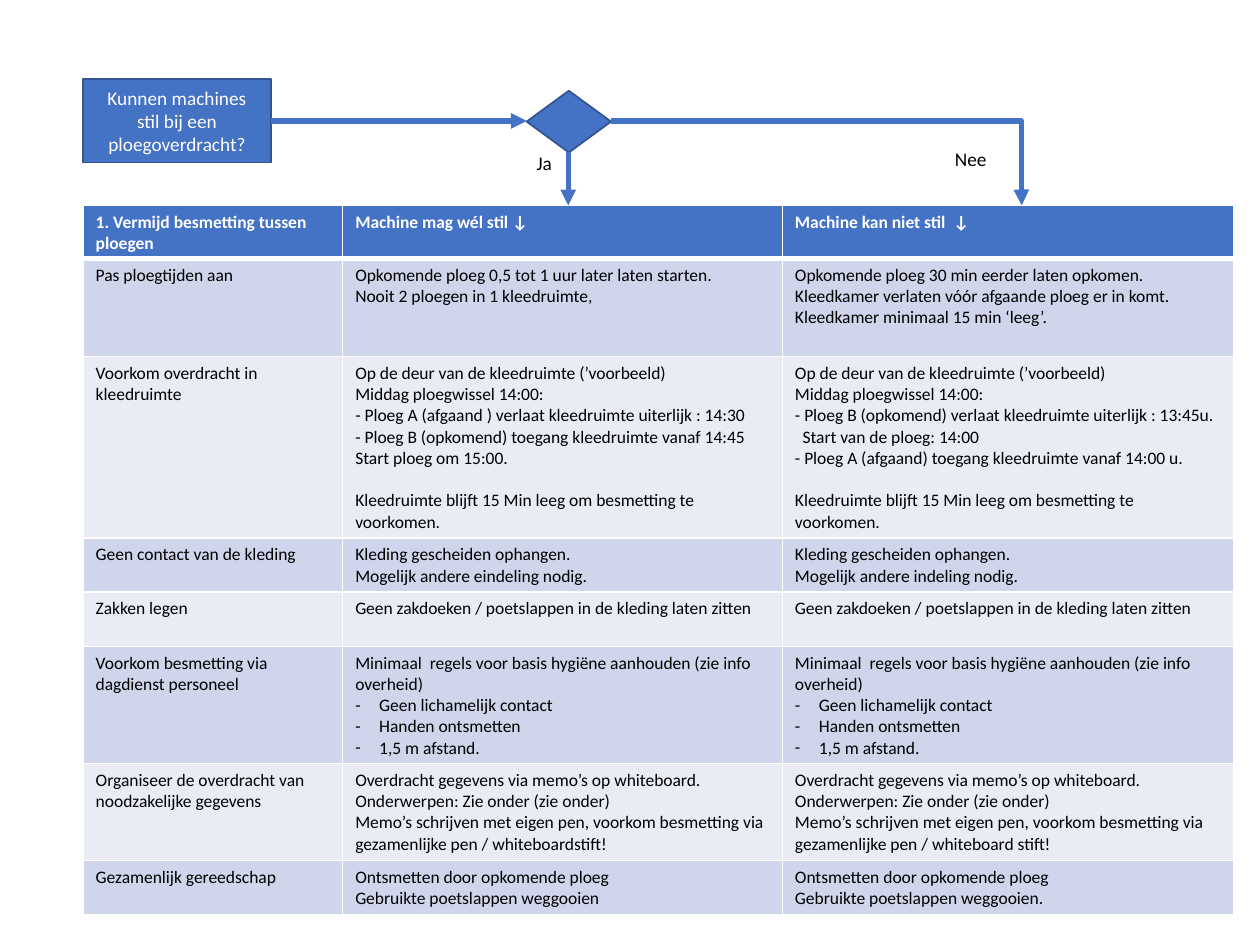
from lxml.etree import SubElement
from pptx import Presentation
from pptx.dml.color import RGBColor
from pptx.enum.shapes import MSO_CONNECTOR, MSO_SHAPE
from pptx.enum.text import MSO_ANCHOR, MSO_AUTO_SIZE, PP_ALIGN
from pptx.oxml import parse_xml
from pptx.oxml.ns import nsdecls, qn
from pptx.util import Inches, Pt

BLUE, EDGE, WHITE, BLACK = "4472C4", "325491", "FFFFFF", "000000"
BANDS = ["E9EBF5", "CFD5EA"]


def rgb(value):
    return RGBColor.from_string(value)


def write(tf, text, size=10, color=BLACK, bold=False, align=PP_ALIGN.LEFT):
    for i, line in enumerate(text.split("\n")):
        p = tf.paragraphs[0] if i == 0 else tf.add_paragraph()
        mark = line[:2]
        p.text = line[2:] if mark in ("* ", "+ ", "> ") else line
        p.alignment = align
        pPr = p._p.get_or_add_pPr()
        if mark == "* ":
            pPr.set("marL", str(Inches(0.19)))
            pPr.set("indent", str(-Inches(0.19)))
            SubElement(pPr, qn("a:buFont")).set("typeface", "Calibri")
            SubElement(pPr, qn("a:buChar")).set("char", "-")
        elif mark == "> ":
            pPr.set("marL", str(Inches(0.06)))
        elif mark == "+ ":
            p.space_before = Pt(12.2)
        for br in p._p.findall(qn("a:br")):
            SubElement(br, qn("a:rPr")).set("sz", str(size * 100))
        for r in p.runs:
            r.font.name = "Calibri"
            r.font.size = Pt(size)
            r.font.bold = bold
            r.font.color.rgb = rgb(color)


prs = Presentation()
prs.slide_width, prs.slide_height = Inches(10), Inches(7.5)
U = prs.slide_width // 1000
s = prs.slides.add_slide(prs.slide_layouts[6])

for kind, x, y, w, h, text in [
    (MSO_SHAPE.RECTANGLE, 66, 63, 149, 66, "Kunnen machines stil bij een ploegoverdracht?"),
    (MSO_SHAPE.FLOWCHART_DECISION, 418, 72, 67, 49, ""),
]:
    sp = s.shapes.add_shape(kind, x * U, y * U, w * U, h * U)
    sp.shadow.inherit = False
    sp.fill.solid()
    sp.fill.fore_color.rgb = rgb(BLUE)
    sp.line.color.rgb = rgb(EDGE)
    sp.line.width = Pt(1)
    sp.text_frame.word_wrap = True
    sp.text_frame.vertical_anchor = MSO_ANCHOR.MIDDLE
    write(sp.text_frame, text, size=11, color=WHITE, align=PP_ALIGN.CENTER)

for text, x, y, w in [("Ja", 416, 115, 32), ("Nee", 748, 112, 46)]:
    tf = s.shapes.add_textbox(x * U, y * U, w * U, 29 * U).text_frame
    tf.word_wrap = False
    tf.auto_size = MSO_AUTO_SIZE.SHAPE_TO_FIT_TEXT
    write(tf, text, size=11)

door = "Op de deur van de kleedruimte (’voorbeeld)\vMiddag ploegwissel 14:00:\v"
empty = "\n+ Kleedruimte blijft 15 Min leeg om besmetting te voorkomen."
clothes = "Kleding gescheiden ophangen.\vMogelijk andere "
pockets = "Geen zakdoeken / poetslappen in de kleding laten zitten"
hygiene = ("Minimaal  regels voor basis hygiëne aanhouden (zie info overheid)\n"
           "* Geen lichamelijk contact\n* Handen ontsmetten\n* 1,5 m afstand.")
notes = ("Overdracht gegevens via memo’s op whiteboard.\vOnderwerpen: Zie onder (zie onder)\n"
         "Memo’s schrijven met eigen pen, voorkom besmetting via gezamenlijke pen / ")
tools = "Ontsmetten door opkomende ploeg\nGebruikte poetslappen weggooien"
rows = [
    (42, "1. Vermijd besmetting tussen ploegen", "Machine mag wél stil ↓", "Machine kan niet stil  ↓"),
    (78, "Pas ploegtijden aan",
     "Opkomende ploeg 0,5 tot 1 uur later laten starten.\vNooit 2 ploegen in 1 kleedruimte,",
     "Opkomende ploeg 30 min eerder laten opkomen. Kleedkamer verlaten vóór afgaande ploeg er in komt.\n"
     "Kleedkamer minimaal 15 min ‘leeg’."),
    (144, "Voorkom overdracht in kleedruimte",
     door + "- Ploeg A (afgaand ) verlaat kleedruimte uiterlijk : 14:30\n"
     "- Ploeg B (opkomend) toegang kleedruimte vanaf 14:45 Start ploeg om 15:00." + empty,
     door + "- Ploeg B (opkomend) verlaat kleedruimte uiterlijk : 13:45u.\n"
     "> Start van de ploeg: 14:00\n"
     "- Ploeg A (afgaand) toegang kleedruimte vanaf 14:00 u." + empty),
    (43, "Geen contact van de kleding", clothes + "eindeling nodig.", clothes + "indeling nodig."),
    (43, "Zakken legen", pockets, pockets),
    (93, "Voorkom besmetting via dagdienst personeel", hygiene, hygiene),
    (77, "Organiseer de overdracht van noodzakelijke gegevens",
     notes + "whiteboardstift!", notes + "whiteboard stift!"),
    (43, "Gezamenlijk gereedschap", tools, tools + "."),
]
cols = [206, 349, 358]
total = sum(row[0] for row in rows)
table = s.shapes.add_table(len(rows), 3, 66 * U, 163 * U, sum(cols) * U, total * U).table
for c, w in enumerate(cols):
    table.columns[c].width = w * U
for i, (h, *texts) in enumerate(rows):
    table.rows[i].height = h * U
    for c, text in enumerate(texts):
        cell = table.cell(i, c)
        cell.margin_left = cell.margin_right = Inches(0.1)
        cell.margin_top, cell.margin_bottom = Inches(0.05), Inches(0.03)
        for side in "LRTB":
            thick = (i, side) in [(0, "B"), (1, "T")]
            cell._tc.get_or_add_tcPr().append(parse_xml(
                f'<a:ln{side} {nsdecls("a")} w="{Pt(3 if thick else 1)}"><a:solidFill>'
                f'<a:srgbClr val="{WHITE}"/></a:solidFill></a:ln{side}>'))
        cell.fill.solid()
        cell.fill.fore_color.rgb = rgb(BANDS[i % 2] if i else BLUE)
        write(cell.text_frame, text, color=BLACK if i else WHITE, bold=i == 0)

for kind, x1, y1, x2, y2 in [
    (MSO_CONNECTOR.STRAIGHT, 215, 96, 418, 96),
    (MSO_CONNECTOR.STRAIGHT, 451, 121, 451, 163),
    (MSO_CONNECTOR.ELBOW, 485, 96, 811, 163),
]:
    cx = s.shapes.add_connector(kind, x1 * U, y1 * U, x2 * U, y2 * U)
    cx.line.color.rgb = rgb(BLUE)
    cx.line.width = Pt(3)
    spPr = cx._element.spPr
    SubElement(spPr.find(qn("a:ln")), qn("a:tailEnd")).set("type", "triangle")
    SubElement(spPr, qn("a:effectLst"))
    if kind == MSO_CONNECTOR.ELBOW:
        gd = SubElement(spPr.find(qn("a:prstGeom")).find(qn("a:avLst")), qn("a:gd"))
        gd.set("name", "adj1")
        gd.set("fmla", "val 99900")

prs.save("out.pptx")
